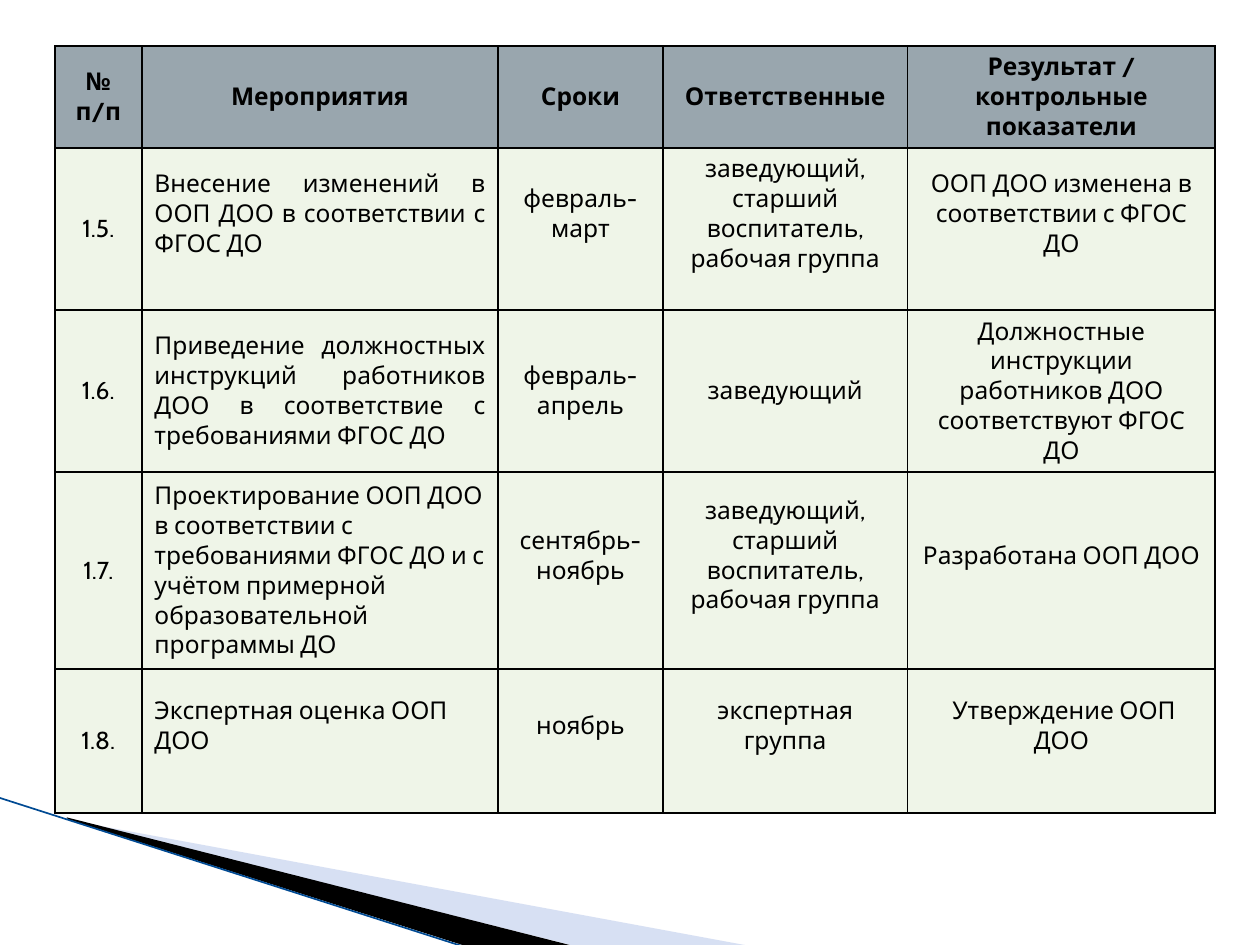
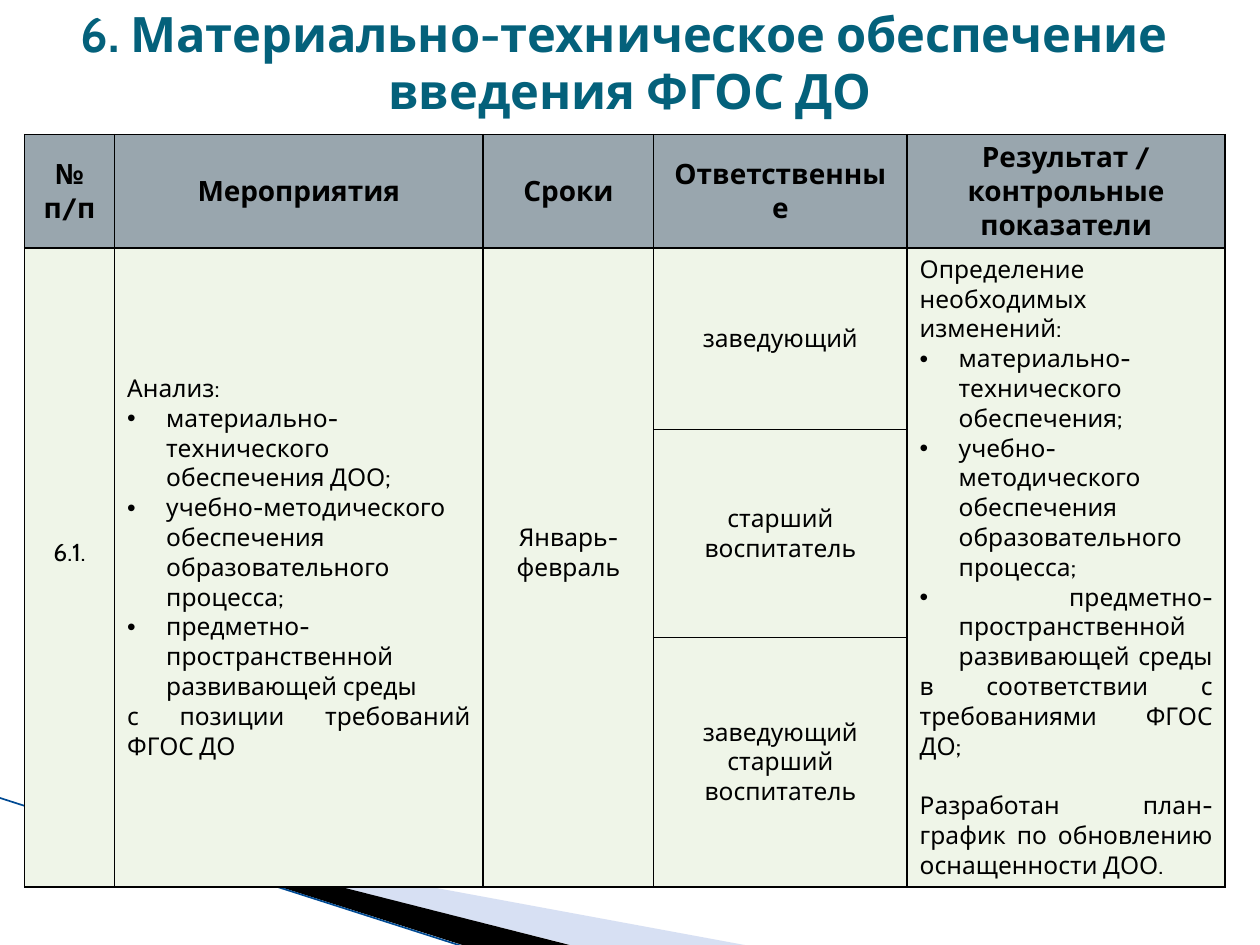
from dataclasses import dataclass

from lxml import etree
from pptx import Presentation
from pptx.dml.color import RGBColor
from pptx.enum.shapes import MSO_CONNECTOR
from pptx.enum.text import MSO_ANCHOR, PP_ALIGN
from pptx.oxml.ns import qn
from pptx.util import Emu, Inches, Pt

CENTER, JUSTIFY, LEFT = PP_ALIGN.CENTER, PP_ALIGN.JUSTIFY, PP_ALIGN.LEFT
MIDDLE = MSO_ANCHOR.MIDDLE
STRAIGHT = MSO_CONNECTOR.STRAIGHT

# Shared look
SLIDE_W, SLIDE_H = Inches(10), Inches(7.5)
INK, TITLE_TEAL = "000000", "04617B"
HEADER_GREY, BODY_GREEN = "99A6AE", "EFF5E8"
WEDGE_BLUE, EDGE_BLUE = "9DB2E1", "004A93"
BODY_FORMAT = {"name": "Cabin", "size": Pt(14), "bold": False}
TITLE_FORMAT = {"name": "Cabin", "size": Pt(27.9), "bold": True}
COLUMN_SHARES = (7.5, 30.7, 14.2, 21.1, 26.5)
BULLET_INDENT = Inches(0.31)
BLANK_LINE = Pt(17)
LIFT = Inches(0.24)


@dataclass(frozen=True)
class Line:
    text: str
    bullet: bool = False
    gap_before: bool = False


@dataclass(frozen=True)
class Entry:
    lines: tuple
    align: PP_ALIGN = CENTER
    lifted: bool = False
    row_span: int = 1


@dataclass(frozen=True)
class Plan:
    """A plan table: left, top, width and row heights are percent of the slide."""
    left: float
    top: float
    width: float
    row_heights: tuple
    header_size: int
    rows: tuple


@dataclass(frozen=True)
class Wedge:
    """An outline whose points may lie beyond its frame (left, top, width, height)."""
    frame: tuple
    points: tuple
    color: str
    alpha: int


def entry(*lines, align=CENTER, lifted=False, row_span=1) -> Entry:
    parts = tuple(Line(x) if isinstance(x, str) else x for x in lines)
    return Entry(parts, align, lifted, row_span)


def item(text: str) -> Line:
    return Line(text, bullet=True)


# Content
HEADINGS = (
    entry("№ п/п"), entry("Мероприятия"), entry("Сроки"), entry("Ответственные"),
    entry("Результат /", "контрольные показатели"),
)
WORKING_GROUP = entry("заведующий, старший воспитатель,", "рабочая группа", lifted=True)

PROGRAMME_PLAN = Plan(4.35, 4.85, 92.1, (10.8, 17.1, 17.1, 20.9, 15.2), 14, (
    (entry("1.5."),
     entry("Внесение изменений в ООП ДОО в соответствии с ФГОС ДО",
           align=JUSTIFY, lifted=True),
     entry("февраль-март", lifted=True),
     WORKING_GROUP,
     entry("ООП ДОО изменена в соответствии с ФГОС ДО", lifted=True)),
    (entry("1.6."),
     entry("Приведение должностных инструкций работников ДОО в соответствие "
           "с требованиями ФГОС ДО", align=JUSTIFY),
     entry("февраль-апрель"),
     entry("заведующий"),
     entry("Должностные инструкции работников ДОО соответствуют ФГОС ДО")),
    (entry("1.7."),
     entry("Проектирование ООП ДОО в соответствии с требованиями ФГОС ДО и с "
           "учётом примерной образовательной программы ДО", align=LEFT),
     entry("сентябрь-ноябрь", lifted=True),
     WORKING_GROUP,
     entry("Разработана ООП ДОО", lifted=True)),
    (entry("1.8."),
     entry("Экспертная оценка ООП ДОО", align=LEFT, lifted=True),
     entry("ноябрь", lifted=True),
     entry("экспертная группа", lifted=True),
     entry(" Утверждение ООП ДОО", lifted=True)),
))

EQUIPMENT_TITLE = ("6. Материально-техническое обеспечение ", "введения ФГОС ДО")
EQUIPMENT_PLAN = Plan(1.95, 14.25, 95.3, (12, 19.2, 22, 26.4), 16, (
    (entry("6.1.", lifted=True, row_span=3),
     entry("Анализ: ",
           item("материально-технического обеспечения ДОО; "),
           item("учебно-методического обеспечения образовательного процесса;"),
           item("предметно-пространственной развивающей среды "),
           "с позиции требований ФГОС ДО", align=JUSTIFY, row_span=3),
     entry("Январь-февраль", lifted=True, row_span=3),
     entry("заведующий"),
     entry("Определение необходимых изменений: ",
           item("материально-технического обеспечения;"),
           item("учебно-методического обеспечения образовательного процесса;"),
           item(" предметно-пространственной развивающей среды "),
           "в соответствии с требованиями ФГОС ДО;",
           Line("Разработан план-график по обновлению оснащенности ДОО.",
                gap_before=True),
           align=JUSTIFY, row_span=3)),
    (None, None, None, entry("старший воспитатель"), None),
    (None, None, None, entry("заведующий", "старший воспитатель"), None),
))

# Corner decoration, in percent of the slide
WEDGES = (
    Wedge((7.8, 72.93, 41.6, 21.07),
          ((5.5, 86.8), (59.5, 100.1), (45.6, 100.1), (5.5, 86.7)), WEDGE_BLUE, 40),
    Wedge((-0.6, 84.4, 41.6, 12.27),
          ((5.3, 86.5), (45.5, 100.1), (37.4, 100.3), (5.4, 86.7)), INK, 100),
)
EDGE = ((-0.1, 84.4), (37.1, 100.3))


def rgb(color: str) -> RGBColor:
    return RGBColor.from_string(color)


def across(percent: float) -> Emu:
    return Emu(round(SLIDE_W * percent / 100))


def down(percent: float) -> Emu:
    return Emu(round(SLIDE_H * percent / 100))


def set_format(font, values: dict, color: str) -> None:
    for name, value in values.items():
        setattr(font, name, value)
    font.color.rgb = rgb(color)


def set_frame(shape, frame: tuple) -> None:
    """Change the frame of a freeform while its points stay in place."""
    left, top, width, height = (
        measure(value) for measure, value in zip((across, down) * 2, frame))
    shift_x, shift_y = shape.left - left, shape.top - top
    outline = shape._element.find(".//" + qn("a:path"))
    for point in outline.iter(qn("a:pt")):
        point.set("x", str(int(point.get("x")) + shift_x))
        point.set("y", str(int(point.get("y")) + shift_y))
    outline.set("w", str(width))
    outline.set("h", str(height))
    shape.left, shape.top, shape.width, shape.height = left, top, width, height


def draw_corner(slide) -> None:
    for wedge in WEDGES:
        start, *rest = [(across(x), down(y)) for x, y in wedge.points]
        outline = slide.shapes.build_freeform(*start)
        outline.add_line_segments(rest, close=True)
        shape = outline.convert_to_shape()
        set_frame(shape, wedge.frame)
        shape.shadow.inherit = False
        shape.line.fill.background()
        shape.fill.solid()
        shape.fill.fore_color.rgb = rgb(wedge.color)
        if wedge.alpha < 100:
            tint = shape.fill._xPr.find(".//" + qn("a:srgbClr"))
            etree.SubElement(tint, qn("a:alpha"), val=str(wedge.alpha * 1000))
    (x1, y1), (x2, y2) = EDGE
    edge = slide.shapes.add_connector(STRAIGHT, across(x1), down(y1), across(x2), down(y2))
    edge.line.color.rgb = rgb(EDGE_BLUE)
    edge.line.width = Pt(0.95)
    etree.SubElement(edge._element.spPr, qn("a:effectLst"))


def draw_title(slide, lines: tuple) -> None:
    box = slide.shapes.add_textbox(across(1.2), down(1.8), across(97.6), down(9.5))
    frame = box.text_frame
    frame.word_wrap = True
    frame.vertical_anchor = MIDDLE
    frame.margin_top = frame.margin_bottom = 0
    for index, text in enumerate(lines):
        paragraph = frame.paragraphs[0] if index == 0 else frame.add_paragraph()
        paragraph.text = text
        paragraph.alignment = CENTER
        paragraph.line_spacing = Pt(33)
        set_format(paragraph.font, TITLE_FORMAT, TITLE_TEAL)


def add_borders(cell) -> None:
    properties = cell._tc.get_or_add_tcPr()
    for side in ("a:lnL", "a:lnR", "a:lnT", "a:lnB"):
        border = etree.SubElement(properties, qn(side), w=str(Pt(1)))
        fill = etree.SubElement(border, qn("a:solidFill"))
        etree.SubElement(fill, qn("a:srgbClr"), val=INK)


def add_bullet(paragraph) -> None:
    properties = paragraph._p.get_or_add_pPr()
    properties.set("marL", str(BULLET_INDENT))
    properties.set("indent", str(-BULLET_INDENT))
    etree.SubElement(properties, qn("a:buFont"), typeface="Arial")
    etree.SubElement(properties, qn("a:buChar"), char="•")


def fill_cell(cell, content: Entry, text_format: dict) -> None:
    cell.vertical_anchor = MIDDLE
    if content.lifted:
        cell.margin_bottom = Inches(0.05) + LIFT
    frame = cell.text_frame
    for index, line in enumerate(content.lines):
        paragraph = frame.paragraphs[0] if index == 0 else frame.add_paragraph()
        paragraph.text = line.text
        paragraph.alignment = content.align
        if line.gap_before:
            paragraph.space_before = BLANK_LINE
        if line.bullet:
            add_bullet(paragraph)
        set_format(paragraph.font, text_format, INK)


def draw_plan(slide, plan: Plan) -> None:
    table = slide.shapes.add_table(
        len(plan.row_heights), len(COLUMN_SHARES), across(plan.left), down(plan.top),
        across(plan.width), down(sum(plan.row_heights))).table
    table.first_row = table.horz_banding = False
    for column, share in zip(table.columns, COLUMN_SHARES):
        column.width = across(plan.width * share / 100)
    for row, height in zip(table.rows, plan.row_heights):
        row.height = down(height)

    header_format = BODY_FORMAT | {"size": Pt(plan.header_size), "bold": True}
    for r, contents in enumerate((HEADINGS, *plan.rows)):
        for c, content in enumerate(contents):
            cell = table.cell(r, c)
            add_borders(cell)
            cell.fill.solid()
            cell.fill.fore_color.rgb = rgb(BODY_GREEN if r else HEADER_GREY)
            if content is None:
                continue
            if content.row_span > 1:
                cell.merge(table.cell(r + content.row_span - 1, c))
            fill_cell(cell, content, BODY_FORMAT if r else header_format)


def main() -> None:
    deck = Presentation()
    deck.slide_width, deck.slide_height = SLIDE_W, SLIDE_H
    blank = deck.slide_layouts[6]
    for title, plan in ((None, PROGRAMME_PLAN), (EQUIPMENT_TITLE, EQUIPMENT_PLAN)):
        slide = deck.slides.add_slide(blank)
        draw_corner(slide)
        if title:
            draw_title(slide, title)
        draw_plan(slide, plan)
    deck.save("out.pptx")


if __name__ == "__main__":
    main()
